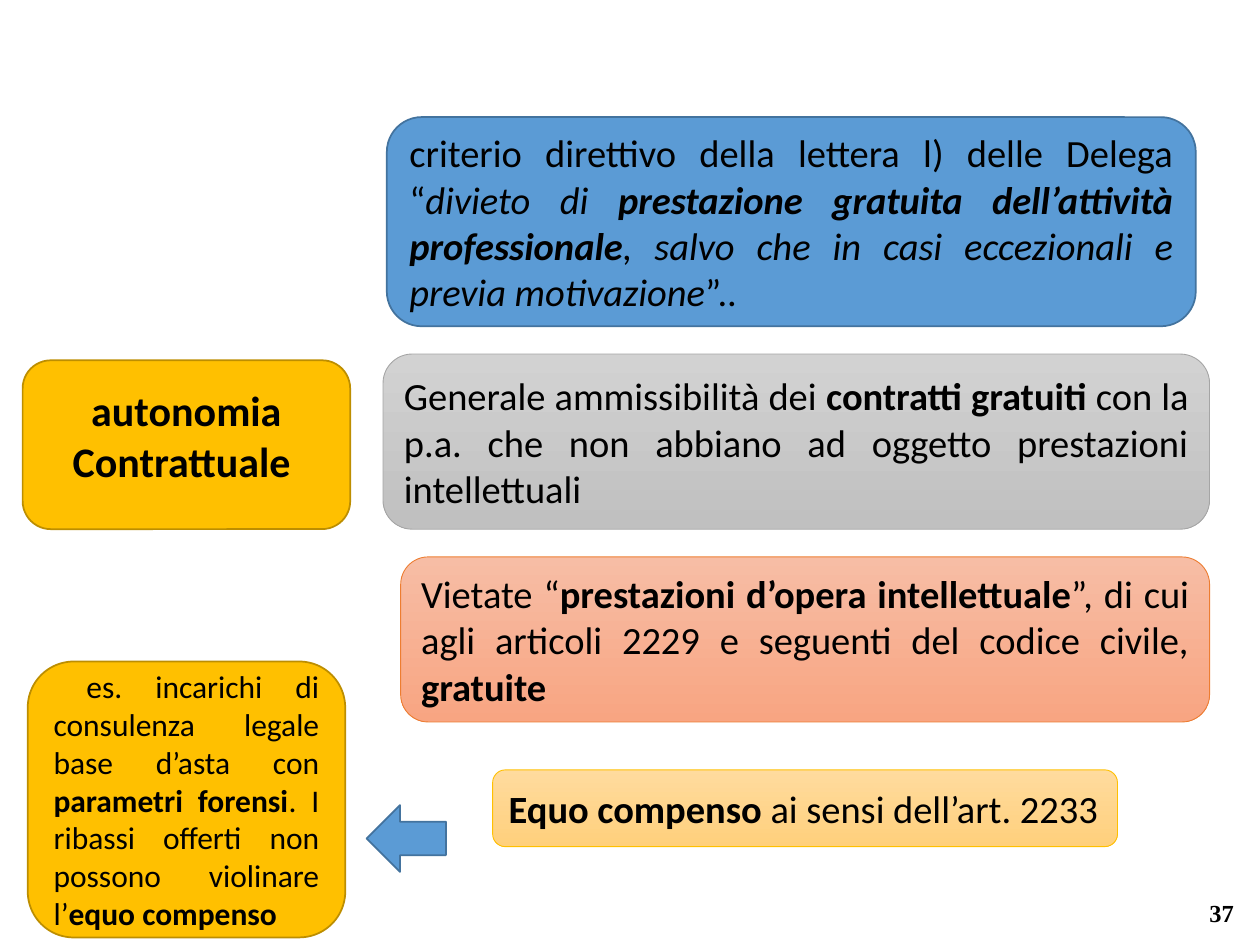
"""Build the slide on contractual autonomy and fair compensation."""
from pptx import Presentation
from pptx.dml.color import RGBColor
from pptx.enum.shapes import MSO_SHAPE
from pptx.enum.text import MSO_ANCHOR, PP_ALIGN
from pptx.util import Inches, Pt

ROUNDED = MSO_SHAPE.ROUNDED_RECTANGLE
LEFT_ARROW = MSO_SHAPE.LEFT_ARROW
MIDDLE = MSO_ANCHOR.MIDDLE
CENTER, JUSTIFY, RIGHT = PP_ALIGN.CENTER, PP_ALIGN.JUSTIFY, PP_ALIGN.RIGHT
COLUMNS, ROWS = 100, 75
COLORS = {
    "text": "000000",
    "gold": "FFC000", "gold_line": "BD8E00",
    "blue": "5B9BD5", "blue_line": "43739E",
    "orange_top": "F7BDA5", "orange_bottom": "F8A582", "orange_line": "ED7D31",
    "gray_top": "D2D2D2", "gray_bottom": "C0C0C0", "gray_line": "A5A5A5",
    "cream_top": "FFDB9E", "cream_bottom": "FFD07C",
}


def color(name):
    """Return the named colour."""
    return RGBColor.from_string(COLORS[name])


def write(frame, paragraphs, size=22, font="Calibri", align=JUSTIFY, bottom=0.05):
    """Write paragraphs of (text, style) runs, where style holds b and i."""
    frame.word_wrap = True
    frame.vertical_anchor = MIDDLE
    frame.margin_bottom = Inches(bottom)
    for index, runs in enumerate(paragraphs):
        paragraph = frame.add_paragraph() if index else frame.paragraphs[0]
        paragraph.alignment = align
        for text, style in runs:
            run = paragraph.add_run()
            run.text = text
            run.font.name = font
            run.font.size = Pt(size)
            run.font.bold = "b" in style
            run.font.italic = "i" in style
            run.font.color.rgb = color("text")


class SlideBuilder:
    """Hold the grid and the current slide."""

    def __init__(self, presentation):
        """Add a blank slide and measure its grid."""
        self.slide = presentation.slides.add_slide(presentation.slide_layouts[6])
        self.column = presentation.slide_width / COLUMNS
        self.row = presentation.slide_height / ROWS

    def place(self, left, top, width, height):
        """Turn columns and rows into lengths."""
        return (round(left * self.column), round(top * self.row),
                round(width * self.column), round(height * self.row))

    def shape(self, kind, area, fills, line, weight=1):
        """Add a shape with a solid fill or a downward gradient."""
        shape = self.slide.shapes.add_shape(kind, *self.place(*area))
        shape.shadow.inherit = False
        if len(fills) == 1:
            shape.fill.solid()
            shape.fill.fore_color.rgb = color(fills[0])
        else:
            shape.fill.gradient()
            shape.fill.gradient_angle = 270
            for position, (stop, name) in enumerate(zip(shape.fill.gradient_stops, fills)):
                stop.position = position
                stop.color.rgb = color(name)
        shape.line.color.rgb = color(line)
        shape.line.width = Pt(weight)
        return shape

    def card(self, area, fills, line, paragraphs, weight=1, **text_format):
        """Add a rounded box with text."""
        shape = self.shape(ROUNDED, area, fills, line, weight)
        write(shape.text_frame, paragraphs, **text_format)

    def text(self, area, paragraphs, **text_format):
        """Add a plain text box."""
        box = self.slide.shapes.add_textbox(*self.place(*area))
        write(box.text_frame, paragraphs, **text_format)


def main():
    """Build and save the presentation."""
    presentation = Presentation()
    presentation.slide_width, presentation.slide_height = Inches(10), Inches(7.5)
    builder = SlideBuilder(presentation)

    builder.text((76.4, 70.4, 22.5, 4), [[("37", "b")]],
                 size=14, font="Times New Roman", align=RIGHT)
    builder.card((1.8, 28.6, 26, 13.4), ["gold"], "gold_line",
                 [[("autonomia", "b")], [("Contrattuale ", "b")]],
                 size=24, align=CENTER, bottom=0.2)
    builder.card((30.7, 9.3, 64.2, 16.6), ["blue"], "blue_line", [[
        ("criterio direttivo della lettera l) delle Delega “", ""),
        ("divieto di ", "i"),
        ("prestazione gratuita dell’attività professionale", "bi"),
        (", salvo che in casi eccezionali e previa motivazione", "i"),
        ("”..", "")]])
    builder.card((31.8, 44.2, 64.2, 13.1), ["orange_top", "orange_bottom"], "orange_line", [[
        ("Vietate “", ""),
        ("prestazioni d’opera intellettuale", "b"),
        ("”, di cui agli articoli 2229 e seguenti del codice civile, ", ""),
        ("gratuite", "b")]], weight=0.5)
    builder.card((30.4, 28.1, 65.6, 13.9), ["gray_top", "gray_bottom"], "gray_line", [[
        ("Generale ammissibilità dei ", ""),
        ("contratti gratuiti ", "b"),
        ("con la p.a. che non abbiano ad oggetto prestazioni intellettuali", "")]], weight=0.5)
    builder.card((39.1, 61.1, 49.6, 6.1), ["cream_top", "cream_bottom"], "gold", [[
        ("Equo compenso ", "b"),
        ("ai sensi dell’art. 2233", "")]], weight=0.5)
    builder.card((2.2, 52.5, 25.2, 21.9), ["gold"], "gold_line", [[
        (" es. incarichi di consulenza legale base d’asta con ", ""),
        ("parametri forensi", "b"),
        (". I ribassi offerti non possono violinare l’", ""),
        ("equo compenso", "b")]], size=18)
    builder.shape(LEFT_ARROW, (29.1, 63.9, 6.3, 5.3), ["blue"], "blue_line")

    presentation.save("out.pptx")


if __name__ == "__main__":
    main()
